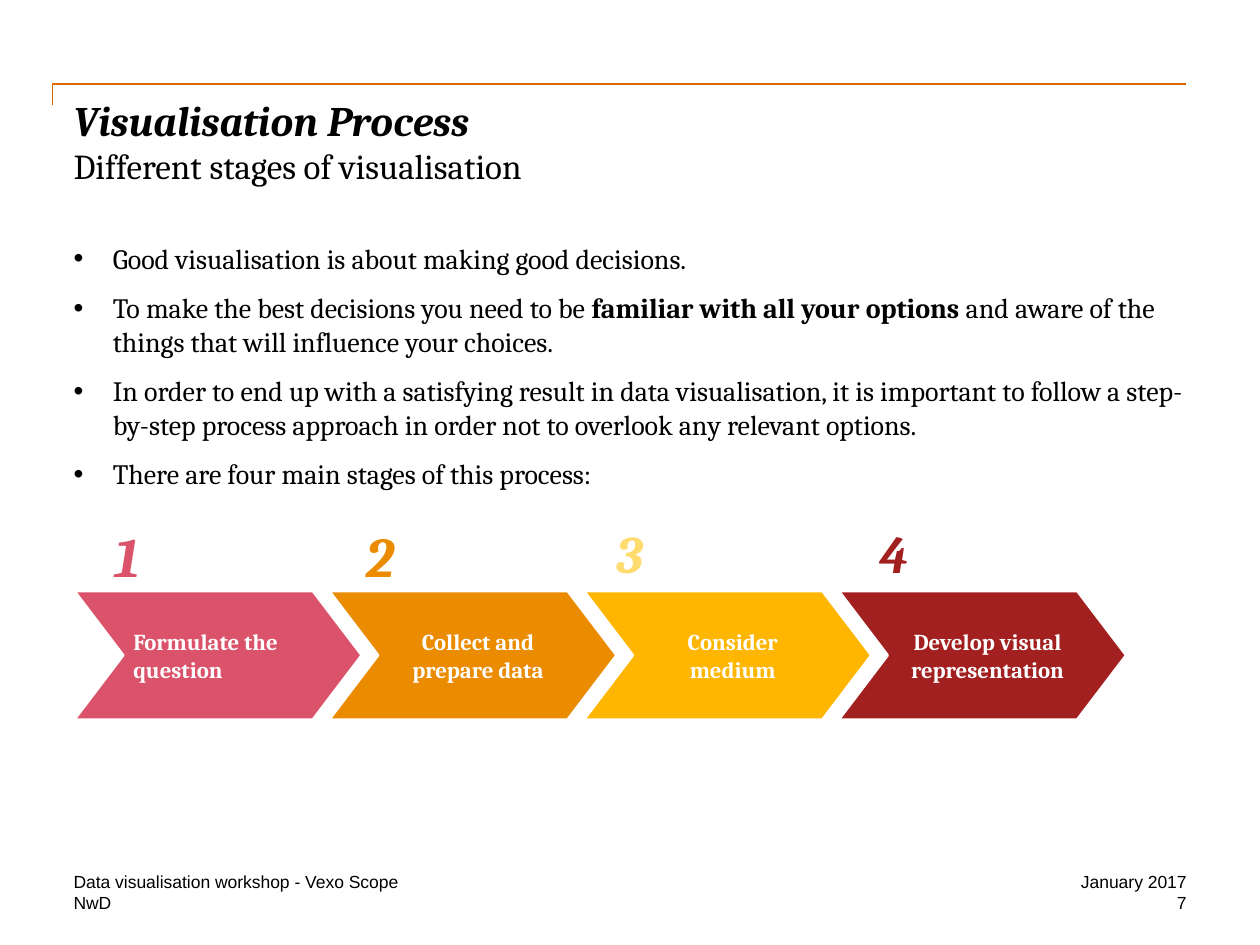
from lxml.etree import SubElement
from pptx import Presentation
from pptx.dml.color import RGBColor
from pptx.enum.shapes import MSO_SHAPE
from pptx.enum.text import MSO_ANCHOR, PP_ALIGN
from pptx.oxml.ns import qn
from pptx.util import Pt

BLACK = RGBColor(0x00, 0x00, 0x00)
WHITE = RGBColor(0xFF, 0xFF, 0xFF)
RULE = RGBColor(0xDC, 0x69, 0x00)
ROSE = RGBColor(0xDB, 0x53, 0x6A)
ORANGE = RGBColor(0xEB, 0x8C, 0x00)
YELLOW = RGBColor(0xFF, 0xB6, 0x00)
PALE_YELLOW = RGBColor(0xFF, 0xDC, 0x6D)
RED = RGBColor(0xA3, 0x20, 0x20)

SERIF, SANS = "Cambria", "Arial"

# Each bullet is a list of (text, bold) runs
BULLETS = [
    [("Good visualisation is about making good decisions.", False)],
    [("To make the best decisions you need to be ", False),
     ("familiar with all your options ", True),
     ("and aware of the things that will influence your choices.", False)],
    [("In order to end up with a satisfying result in data visualisation, it is "
      "important to follow a step-by-step process approach in order not to "
      "overlook any relevant options.", False)],
    [("There are four main stages of this process:", False)],
]

# Label, alignment, fill, number colour, number size, number offset from the chevron
STAGES = [
    ("Formulate the question", PP_ALIGN.LEFT, ROSE, ROSE, 32, 23),
    ("Collect and prepare data", PP_ALIGN.CENTER, ORANGE, ORANGE, 32, 21),
    ("Consider medium", PP_ALIGN.CENTER, YELLOW, PALE_YELLOW, 30, 18.5),
    ("Develop visual representation", PP_ALIGN.CENTER, RED, RED, 30, 23),
]


def set_insets(frame, left=0):
    frame.word_wrap = True
    frame.margin_left = Pt(left)
    frame.margin_top = frame.margin_right = frame.margin_bottom = 0


def add_frame(slide, left, top, width, height):
    box = slide.shapes.add_textbox(Pt(left), Pt(top), Pt(width), Pt(height))
    set_insets(box.text_frame)
    return box.text_frame


def add_run(paragraph, text, size, color=BLACK, name=SERIF, bold=False, italic=False):
    run = paragraph.add_run()
    run.text = text
    font = run.font
    font.size, font.name, font.bold, font.italic = Pt(size), name, bold, italic
    font.color.rgb = color


def add_bullet(paragraph, indent):
    properties = paragraph._p.get_or_add_pPr()
    properties.set("marL", str(Pt(indent)))
    properties.set("indent", str(-Pt(indent)))
    SubElement(properties, qn("a:buFont"), typeface=SANS)
    SubElement(properties, qn("a:buChar"), char="•")


def add_rule(slide, left, top, width, height):
    builder = slide.shapes.build_freeform(Pt(left), Pt(top + height))
    builder.add_line_segments(
        [(Pt(left), Pt(top)), (Pt(left + width), Pt(top))], close=False)
    rule = builder.convert_to_shape()
    rule.shadow.inherit = False
    rule.fill.background()
    rule.line.color.rgb = RULE
    rule.line.width = Pt(1)


def add_title(slide, left, top, width, height):
    paragraph = add_frame(slide, left, top, width, height).paragraphs[0]
    add_run(paragraph, "Visualisation Process", 24, bold=True, italic=True)
    paragraph.add_line_break()
    add_run(paragraph, "Different stages of visualisation", 20)


def add_body(slide, left, top, width, height):
    frame = add_frame(slide, left, top, width, height)
    for index, runs in enumerate(BULLETS):
        paragraph = frame.add_paragraph() if index else frame.paragraphs[0]
        add_bullet(paragraph, 22.5)
        paragraph.space_after = Pt(9)
        for text, bold in runs:
            add_run(paragraph, text, 16, bold=bold)


def add_process(slide, left, top, width, height):
    number_height, chevron_top, pitch = 39, top + 39.7, 145.6
    chevron_width = width - pitch * (len(STAGES) - 1)
    chevron_height = top + height - chevron_top
    for index, (label, alignment, fill, color, size, offset) in enumerate(STAGES):
        x = left + index * pitch

        # Arrow
        chevron = slide.shapes.add_shape(
            MSO_SHAPE.CHEVRON, Pt(x), Pt(chevron_top),
            Pt(chevron_width), Pt(chevron_height))
        chevron.adjustments[0] = 0.38
        chevron.shadow.inherit = False
        chevron.fill.solid()
        chevron.fill.fore_color.rgb = fill
        chevron.line.color.rgb = WHITE
        chevron.line.width = Pt(1.5)
        frame = chevron.text_frame
        set_insets(frame, left=5.75)
        frame.vertical_anchor = MSO_ANCHOR.MIDDLE
        paragraph = frame.paragraphs[0]
        paragraph.alignment = alignment
        add_run(paragraph, label, 13, WHITE, bold=True)

        # Stage number
        number = add_frame(slide, x + offset, top, 45, number_height)
        add_run(number.paragraphs[0], str(index + 1), size, color,
                bold=True, italic=True)


def add_footer(slide, left, top, width, height):
    line_height, right_width = height / 2, 120
    right = left + width - right_width
    for x, row, box_width, alignment, text in [
        (left, 0, 414, PP_ALIGN.LEFT, "Data visualisation workshop - Vexo Scope"),
        (left, 1, 204, PP_ALIGN.LEFT, "NwD"),
        (right, 0, right_width, PP_ALIGN.RIGHT, "January 2017"),
        (right, 1, right_width, PP_ALIGN.RIGHT, "7"),
    ]:
        frame = add_frame(slide, x, top + row * line_height, box_width, line_height)
        paragraph = frame.paragraphs[0]
        paragraph.alignment = alignment
        add_run(paragraph, text, 10, name=SANS)


def main():
    presentation = Presentation()
    presentation.slide_width, presentation.slide_height = Pt(720), Pt(540)
    slide = presentation.slides.add_slide(presentation.slide_layouts[6])
    add_rule(slide, 30, 48, 648, 12)
    add_title(slide, 42, 54, 636, 72)
    add_body(slide, 42, 138, 636, 348)
    add_process(slide, 42.5, 298, 601, 113.2)
    add_footer(slide, 42, 498, 636, 24)
    presentation.save("out.pptx")


if __name__ == "__main__":
    main()
